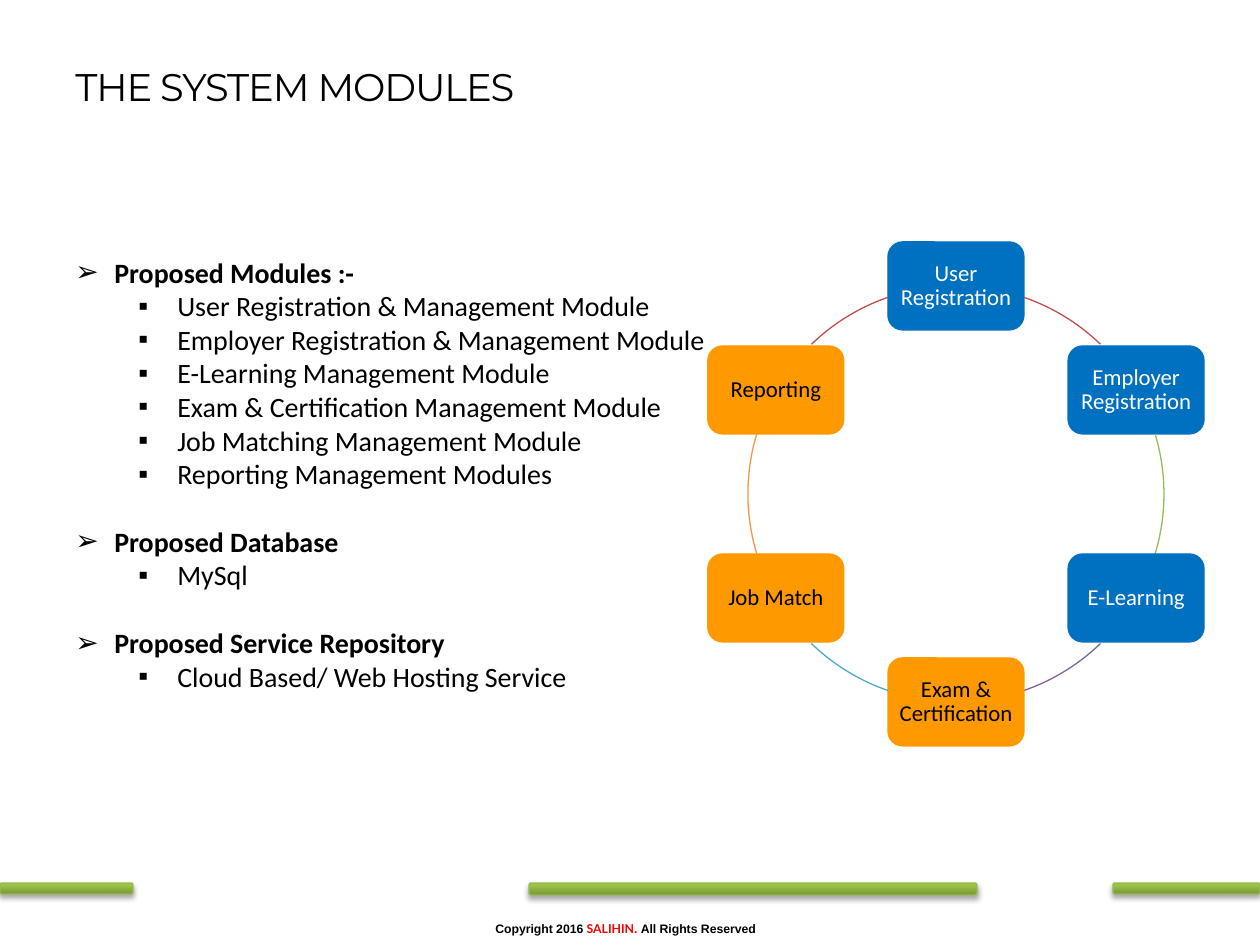
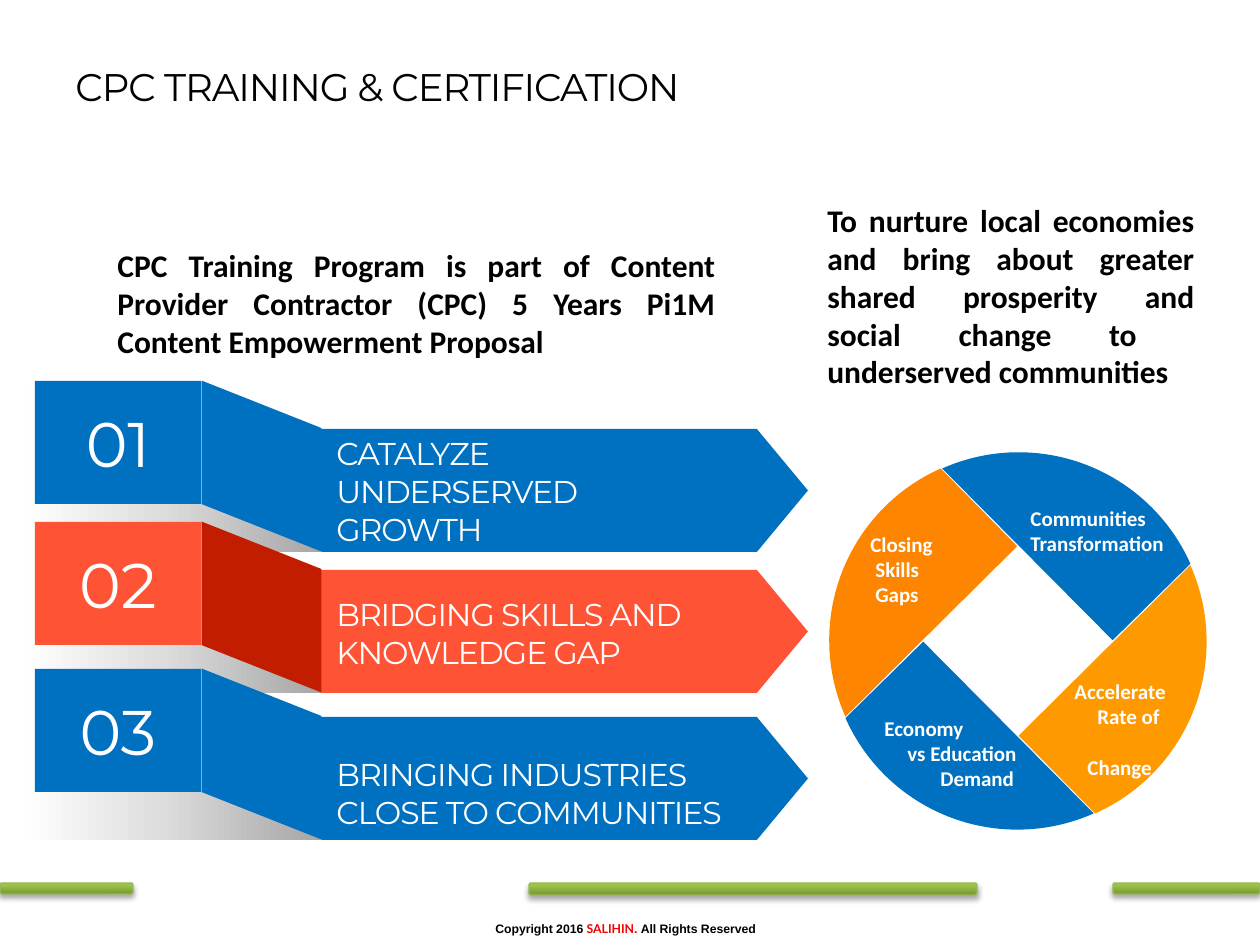
import math

import pptx
import pptx.dml.color
import pptx.enum.shapes
import pptx.enum.text
import pptx.oxml.ns
import pptx.util
from lxml import etree

PX = 914400 / 126
RGB = pptx.dml.color.RGBColor
SHAPE = pptx.enum.shapes.MSO_SHAPE
ALIGN = pptx.enum.text.PP_ALIGN
ANCHOR = pptx.enum.text.MSO_ANCHOR
qn = pptx.oxml.ns.qn

BLACK = RGB(0x00, 0x00, 0x00)
WHITE = RGB(0xFF, 0xFF, 0xFF)
RED = RGB(0xF0, 0x00, 0x00)
BLUE = RGB(0x00, 0x70, 0xC0)
ORANGE = RGB(0xFF, 0x99, 0x00)
DEEP_ORANGE = RGB(0xFD, 0x85, 0x00)
CORAL = RGB(0xFE, 0x53, 0x35)
DARK_RED = RGB(0xC3, 0x1D, 0x01)
BAR_EDGE = RGB(0x98, 0xB9, 0x55)
ARC_RED = RGB(0xC0, 0x50, 0x4D)
ARC_GREEN = RGB(0x9B, 0xBB, 0x59)
ARC_PURPLE = RGB(0x80, 0x64, 0xA2)
ARC_TEAL = RGB(0x4B, 0xAC, 0xC6)
ARC_ORANGE = RGB(0xF7, 0x96, 0x46)

# Gradient stops: position in percent, colour
BAR_STOPS = [(0, RGB(0x9D, 0xC7, 0x46)), (20, RGB(0x9B, 0xC3, 0x48)),
             (100, RGB(0x77, 0x97, 0x37))]
FOLD_STOPS = [(0, RGB(0xA6, 0xA6, 0xA6)), (50, RGB(0xDD, 0xDD, 0xDD)),
              (93, WHITE), (100, WHITE)]

MODULE_LIST = [
    ("Proposed Modules :-", [
        "User Registration & Management Module",
        "Employer Registration & Management Module",
        "E-Learning Management Module",
        "Exam & Certification Management Module",
        "Job Matching Management Module",
        "Reporting Management Modules"]),
    ("Proposed Database", ["MySql"]),
    ("Proposed Service Repository", ["Cloud Based/ Web Hosting Service"]),
]

# Module name, box fill, text colour, then the arc that follows the box
CYCLE = [
    ("User Registration", BLUE, WHITE, -70.9, -46, ARC_RED),
    ("Employer Registration", BLUE, WHITE, -16.7, 16.7, ARC_GREEN),
    ("E-Learning", BLUE, WHITE, 46, 70.9, ARC_PURPLE),
    ("Exam & Certification", ORANGE, BLACK, 109.1, 134, ARC_TEAL),
    ("Job Match", ORANGE, BLACK, 163.3, 196.7, ARC_ORANGE),
    ("Reporting", ORANGE, BLACK, 226, 250.9, ARC_RED),
]

# Number, band top, fill, fold fill, text, bottom of the text below band top
BANDS = [
    ("01", 381, BLUE, BLUE, "CATALYZE UNDERSERVED GROWTH", 173),
    ("02", 522, CORAL, DARK_RED, "BRIDGING SKILLS AND KNOWLEDGE GAP", 155),
    ("03", 669, BLUE, BLUE, "BRINGING INDUSTRIES CLOSE TO COMMUNITIES", 168),
]

# Slice fill, label box, label lines as text, indent px, space before pt
WHEEL = [
    (BLUE, (1018, 499, 180, 63),
     [("Communities", 0, 0), ("Transformation", 0, 0)]),
    (ORANGE, (1062, 672, 135, 115),
     [("Accelerate", 0, 0), ("Rate of", 23, 0), ("Change", 13, 14.6)]),
    (BLUE, (872, 709, 189, 89),
     [("Economy", 0, 0), ("vs Education", 23, 0), ("Demand", 56, 0)]),
    (DEEP_ORANGE, (858, 525, 129, 89),
     [("Closing", 0, 0), ("Skills", 5, 0), ("Gaps", 5, 0)]),
]


def emu(px):
    return round(px * PX)


def style_font(font, size, colour, name="Calibri", bold=False):
    font.size = pptx.util.Pt(size)
    font.name = name
    font.bold = bold
    font.color.rgb = colour


def tighten(para):
    """Letter spacing of the display face."""
    for span in para.runs:
        span.font._element.set("spc", "-60")


def indent(para, left, hanging=0):
    props = para._p.get_or_add_pPr()
    props.set("marL", str(emu(left)))
    props.set("indent", str(emu(-hanging)))
    return props


def add_bullet(para, left, mark):
    props = indent(para, left, 39)
    etree.SubElement(props, qn("a:buFont"), typeface="Arial")
    etree.SubElement(props, qn("a:buChar"), char=mark)


def add_text(page, frame, lines, size, colour, name="Calibri", bold=False,
             align=ALIGN.LEFT, anchor=ANCHOR.TOP):
    box = page.shapes.add_textbox(*map(emu, frame))
    text = box.text_frame
    text.word_wrap = True
    text.vertical_anchor = anchor
    text.text = "\n".join(lines)
    for para in text.paragraphs:
        para.alignment = align
        for span in para.runs:
            style_font(span.font, size, colour, name, bold)
    return text


def paint(shape, fill, line=None):
    shape.fill.solid()
    shape.fill.fore_color.rgb = fill
    if line is None:
        shape.line.fill.background()
    else:
        shape.line.color.rgb = line
        shape.line.width = pptx.util.Pt(0.75)
    shape.shadow.inherit = False


def paint_gradient(shape, stops, angle):
    shape.fill.gradient()
    shape.fill.gradient_angle = angle
    stop_list = shape._element.spPr.find(".//" + qn("a:gsLst"))
    for stop in list(stop_list):
        stop_list.remove(stop)
    for position, colour in stops:
        stop = etree.SubElement(stop_list, qn("a:gs"), pos=str(position * 1000))
        etree.SubElement(stop, qn("a:srgbClr"), val=str(colour))


def add_block(page, kind, frame, fill, line=None, adjust=None):
    shape = page.shapes.add_shape(kind, *map(emu, frame))
    if adjust is not None:
        shape.adjustments[0] = adjust
    paint(shape, fill, line)
    return shape


def label_block(shape, label, size, colour, name="Calibri"):
    text = shape.text_frame
    text.word_wrap = True
    text.vertical_anchor = ANCHOR.MIDDLE
    text.text = label
    para = text.paragraphs[0]
    para.alignment = ALIGN.CENTER
    style_font(para.runs[0].font, size, colour, name)
    return para


def on_circle(centre, radius, degrees):
    angle = math.radians(degrees)
    return (centre[0] + radius * math.cos(angle),
            centre[1] + radius * math.sin(angle))


def curve_points(centre, radius, start, end):
    """Two control points and the end point of a circular curve."""
    sweep = math.radians(end - start)
    reach = math.hypot(radius, radius * 4 / 3 * math.tan(sweep / 4))
    lean = math.degrees(math.acos(radius / reach))
    return [on_circle(centre, reach, start + lean),
            on_circle(centre, reach, end - lean),
            on_circle(centre, radius, end)]


def add_outline(page, points, curves=0):
    """Closed outline; the first points may be triples of curve points."""
    corners = [(emu(x), emu(y)) for x, y in points]
    builder = page.shapes.build_freeform(*corners[0], scale=1.0)
    builder.add_line_segments(corners[1:])
    shape = builder.convert_to_shape()
    steps = shape._element.spPr.findall(".//" + qn("a:lnTo"))
    for number in range(curves):
        triple = steps[3 * number:3 * number + 3]
        curve = etree.Element(qn("a:cubicBezTo"))
        triple[0].addprevious(curve)
        for step in triple:
            curve.append(step[0])
            step.getparent().remove(step)
    return shape


def add_footer(page):
    # Green bars with a soft shadow
    for left, width, height in [(0, 133, 11), (1113, 147, 11), (529, 448, 12)]:
        bar = add_block(page, SHAPE.ROUNDED_RECTANGLE,
                        (left, 883, width, height), BAR_EDGE, BAR_EDGE)
        paint_gradient(bar, BAR_STOPS, 270)
        effects = bar._element.spPr.find(qn("a:effectLst"))
        shade = etree.SubElement(
            effects, qn("a:outerShdw"), blurRad="39370", dist="22860",
            dir="5400000", rotWithShape="0")
        tone = etree.SubElement(shade, qn("a:srgbClr"), val="000000")
        etree.SubElement(tone, qn("a:alpha"), val="35000")
    # Copyright line
    para = add_text(page, (483, 915, 529, 28), [""], 7, BLACK).paragraphs[0]
    for words, name, colour in [("Copyright 2016 ", "Arial", BLACK),
                                ("SALIHIN", "Lato", RED),
                                (". ", "Arial", RED),
                                ("All Rights Reserved", "Arial", BLACK)]:
        span = para.add_run()
        span.text = words
        style_font(span.font, 7, colour, name, bold=True)


def add_page(deck, title):
    page = deck.slides.add_slide(deck.slide_layouts[6])
    add_footer(page)
    text = add_text(page, (63, 0, 1123, 115), [title], 22, BLACK, "Montserrat",
                    anchor=ANCHOR.BOTTOM)
    tighten(text.paragraphs[0])
    return page


def add_module_list(page):
    rows = []
    for heading, items in MODULE_LIST:
        rows.append((heading, True))
        rows += [(item, False) for item in items]
    text = add_text(page, (63, 249, 693, 454), [row[0] for row in rows],
                    16, BLACK, align=ALIGN.JUSTIFY)
    for number, (para, (_, is_heading)) in enumerate(zip(text.paragraphs, rows)):
        if is_heading and number:
            para.space_before = pptx.util.Pt(19.5)
        add_bullet(para, 39 if is_heading else 102, "➢" if is_heading else "▪")
        para.runs[0].font.bold = is_heading


def add_cycle(page):
    centre, radius, width, height = (956, 494), 208, 136, 88
    ring = (centre[0] - radius, centre[1] - radius, 2 * radius, 2 * radius)
    for number, (name, fill, ink, start, end, arc_colour) in enumerate(CYCLE):
        x, y = on_circle(centre, radius, 60 * number - 90)
        box = add_block(page, SHAPE.ROUNDED_RECTANGLE,
                        (x - width / 2, y - height / 2, width, height),
                        fill, fill)
        text = box.text_frame
        text.margin_left = text.margin_right = emu(4)
        label_block(box, name, 13, ink).line_spacing = 0.9
        arc = add_block(page, SHAPE.ARC, ring, fill, arc_colour)
        arc.fill.background()
        # One degree is 60000 units, and an adjustment of 1 is 100000 units
        arc.adjustments[0] = start % 360 * 0.6
        arc.adjustments[1] = end % 360 * 0.6


def add_band(page, number, top, fill, fold_fill, words, text_bottom):
    add_block(page, SHAPE.PENTAGON, (314, top + 48, 494, 123), fill,
              adjust=0.415)
    # Shade behind the fold
    shade = add_outline(page, [(0, top), (200, top), (322, top + 171),
                               (0, top + 171)])
    paint(shade, WHITE)
    paint_gradient(shade, FOLD_STOPS, 180)
    tile = add_block(page, SHAPE.RECTANGLE, (35, top, 166, 123), fill)
    label_block(tile, number, 36, WHITE, "Montserrat")
    fold = add_block(page, SHAPE.PARALLELOGRAM, (176, top + 25, 171, 120),
                     fold_fill, adjust=0.396)
    fold.rotation = 270
    text = add_text(page, (324, top + text_bottom - 107, 416, 107), [words], 18,
                    WHITE, "Montserrat", anchor=ANCHOR.BOTTOM)
    tighten(text.paragraphs[0])


def add_wheel(page):
    radius = 188
    for number, (fill, _, _) in enumerate(WHEEL):
        # Each slice is a quarter turn, moved out a little to leave a gap
        turn = 90 * number
        centre = on_circle((1018, 641), 1, turn - 45)
        points = [on_circle(centre, radius, turn - 114)]
        points += curve_points(centre, radius, turn - 114, turn - 90)
        points += curve_points(centre, radius, turn - 90, turn - 24)
        points.append(on_circle(centre, 94, turn))
        paint(add_outline(page, points, curves=2), fill)
    for _, frame, lines in WHEEL:
        text = add_text(page, frame, [line[0] for line in lines], 12, WHITE,
                        bold=True)
        for para, (_, left, before) in zip(text.paragraphs, lines):
            indent(para, left)
            if before:
                para.space_before = pptx.util.Pt(before)


def main():
    deck = pptx.Presentation()
    deck.slide_width, deck.slide_height = emu(1260), emu(945)

    # System modules
    page = add_page(deck, "THE SYSTEM MODULES")
    add_cycle(page)
    add_module_list(page)

    # Training and certification
    page = add_page(deck, "CPC TRAINING & CERTIFICATION")
    add_wheel(page)
    for band in BANDS:
        add_band(page, *band)
    for frame, words in [
            ((105, 240, 623, 127),
             "CPC Training Program is part of Content Provider Contractor (CPC) "
             "5 Years Pi1M Content Empowerment Proposal"),
            ((815, 195, 392, 204),
             "To nurture local economies and bring about greater shared "
             "prosperity and social change to  underserved communities")]:
        add_text(page, frame, [words], 18, BLACK, bold=True,
                 align=ALIGN.JUSTIFY)

    deck.save("out.pptx")


if __name__ == "__main__":
    main()
